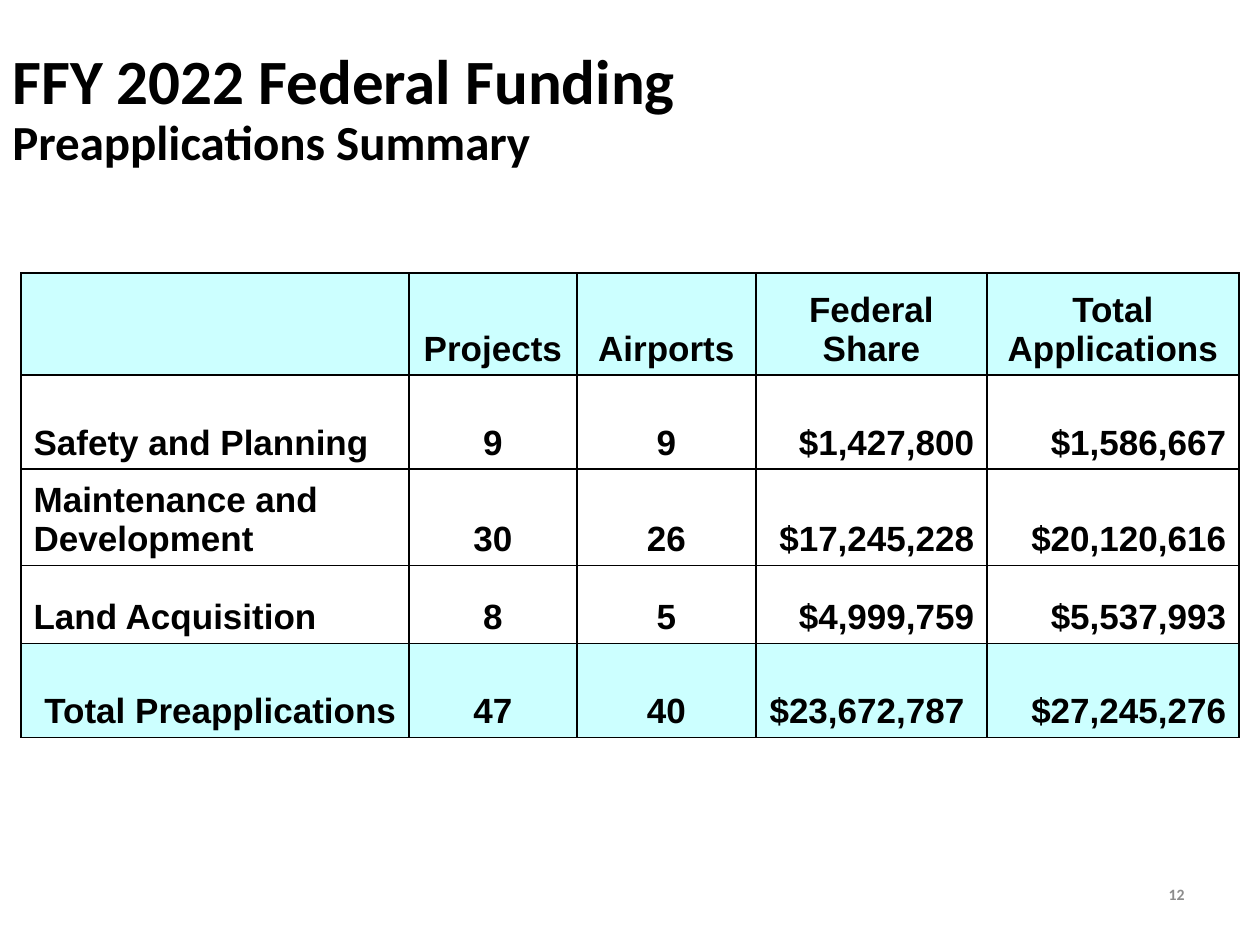
"""Build the FFY 2022 preapplications summary slide."""
from lxml import etree
from pptx import Presentation
from pptx.dml.color import RGBColor
from pptx.enum import text
from pptx.oxml.ns import qn
from pptx.util import Pt

PX = 7257
COLORS = {"ink": "000000", "band": "CCFFFF", "plain": "FFFFFF", "number": "8C8C8C"}
LEFT, CENTER, RIGHT = text.PP_ALIGN.LEFT, text.PP_ALIGN.CENTER, text.PP_ALIGN.RIGHT


def write(paragraph, words, color, **formats):
    run = paragraph.add_run()
    run.text = words
    for key, value in formats.items():
        setattr(run.font, key, value)
    run.font.color.rgb = RGBColor.from_string(COLORS[color])


def add_box(slide, *bounds):
    frame = slide.shapes.add_textbox(*(v * PX for v in bounds)).text_frame
    frame.word_wrap = True
    frame.vertical_anchor = text.MSO_ANCHOR.MIDDLE
    return frame.paragraphs[0]


deck = Presentation()
deck.slide_width, deck.slide_height = 1260 * PX, 945 * PX
slide = deck.slides.add_slide(deck.slide_layouts[6])

heading = add_box(slide, 0, 32, 1260, 157)
heading.line_spacing = 0.9
write(heading, "FFY 2022 Federal Funding", "ink", name="Calibri", size=Pt(36), bold=True)
heading.add_line_break()
write(heading, "Preapplications Summary", "ink", name="Calibri", size=Pt(28), bold=True)

summary = [
    ["", "Projects", "Airports", "Federal Share", "Total Applications"],
    ["Safety and Planning", "9", "9", "$1,427,800", "$1,586,667"],
    ["Maintenance and Development", "30", "26", "$17,245,228", "$20,120,616"],
    ["Land Acquisition", "8", "5", "$4,999,759", "$5,537,993"],
    ["Total Preapplications", "47", "40", "$23,672,787 ", "$27,245,276"],
]
widths = [388, 168, 179, 231, 252]
heights = [102, 94, 94, 78, 94]
last = len(summary) - 1

grid = slide.shapes.add_table(
    len(heights), len(widths), 21 * PX, 273 * PX, sum(widths) * PX, sum(heights) * PX
).table
for column, width in zip(grid.columns, widths):
    column.width = width * PX
for row, height in zip(grid.rows, heights):
    row.height = height * PX

for r, entries in enumerate(summary):
    for c, entry in enumerate(entries):
        cell = grid.cell(r, c)
        cell.vertical_anchor = text.MSO_ANCHOR.BOTTOM
        properties = cell._tc.get_or_add_tcPr()
        for side in ("a:lnL", "a:lnR", "a:lnT", "a:lnB"):
            border = etree.SubElement(properties, qn(side), w=str(Pt(1)))
            ink = etree.SubElement(border, qn("a:solidFill"))
            etree.SubElement(ink, qn("a:srgbClr"), val=COLORS["ink"])
        cell.fill.solid()
        shade = "band" if r in (0, last) else "plain"
        cell.fill.fore_color.rgb = RGBColor.from_string(COLORS[shade])
        paragraph = cell.text_frame.paragraphs[0]
        if r == 0 or c in (1, 2):
            paragraph.alignment = CENTER
        else:
            paragraph.alignment = LEFT if c == 0 and r < last else RIGHT
        if entry:
            write(paragraph, entry, "ink", name="Arial", size=Pt(20), bold=True)

page = add_box(slide, 903, 861, 294, 66)
page.alignment = RIGHT
write(page, "12", "number", name="Calibri", size=Pt(9), bold=True)

deck.save("out.pptx")
